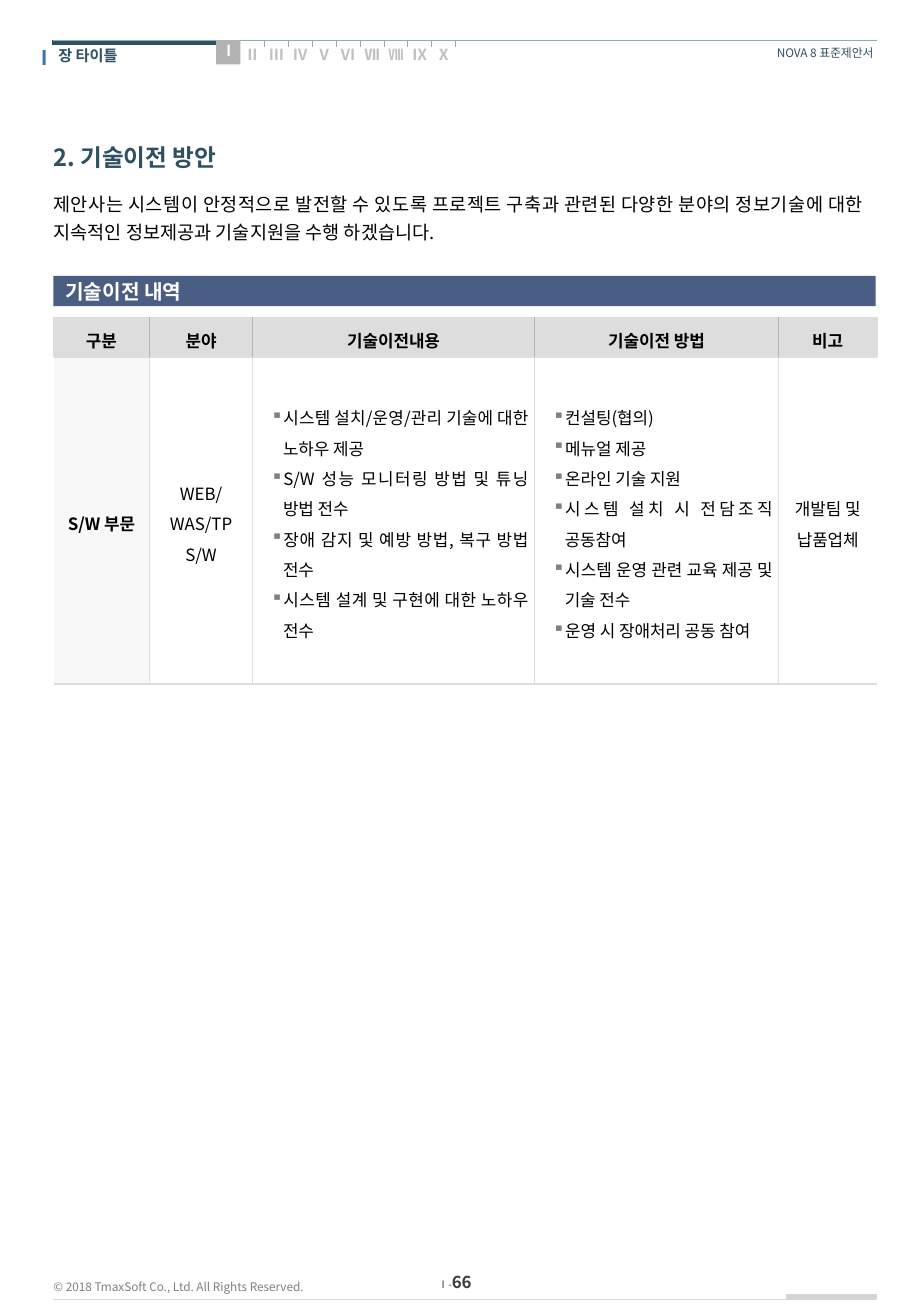
"""Build the technology transfer page of a proposal with its header, table and footer."""
from lxml import etree
from pptx import Presentation
from pptx.dml.color import RGBColor
from pptx.enum import dml, shapes, text
from pptx.oxml import ns
from pptx.util import Inches, Pt

FONT = "Noto Sans CJK KR"
BLACK = RGBColor(0x00, 0x00, 0x00)
WHITE = RGBColor(0xFF, 0xFF, 0xFF)
NAVY = RGBColor(0x2E, 0x50, 0x61)
BAND = RGBColor(0x4A, 0x5D, 0x82)
ACCENT = RGBColor(0x3D, 0x74, 0xAB)
RULE = RGBColor(0x8C, 0xAE, 0xBA)
FOOT_RULE = RGBColor(0xD6, 0xD5, 0xD4)
SILVER = RGBColor(0xC0, 0xC0, 0xC0)
MID_GREY = RGBColor(0xB2, 0xB2, 0xB2)
GREY = RGBColor(0x80, 0x80, 0x80)
DARK = RGBColor(0x3D, 0x3D, 0x3D)
HEAD_FILL = RGBColor(0xDD, 0xDD, 0xDD)
SIDE_FILL = RGBColor(0xF8, 0xF8, 0xF8)

LEFT, CENTER = text.PP_ALIGN.LEFT, text.PP_ALIGN.CENTER
RIGHT, JUSTIFY = text.PP_ALIGN.RIGHT, text.PP_ALIGN.JUSTIFY
TOP, MIDDLE = text.MSO_ANCHOR.TOP, text.MSO_ANCHOR.MIDDLE

CHAPTERS = "ⅠⅡⅢⅣⅤⅥⅦⅧⅨⅩ"
TITLE = "2. 기술이전 방안"
INTRO = ("제안사는 시스템이 안정적으로 발전할 수 있도록 프로젝트 구축과 관련된 다양한 분야의 "
         "정보기술에 대한 지속적인 정보제공과 기술지원을 수행 하겠습니다.")
COLUMNS = [0.79, 0.85, 2.32, 2.01, 0.81]
ROWS = [0.33, 2.69]
TABLE = [
    [["구분"], ["분야"], ["기술이전내용"], ["기술이전 방법"], ["비고"]],
    [["S/W 부문"],
     ["WEB/WAS/TP S/W"],
     ["시스템 설치/운영/관리 기술에 대한 노하우 제공",
      "S/W 성능 모니터링 방법 및 튜닝 방법 전수",
      "장애 감지 및 예방 방법, 복구 방법 전수",
      "시스템 설계 및 구현에 대한 노하우 전수"],
     ["컨설팅(협의)",
      "메뉴얼 제공",
      "온라인 기술 지원",
      "시스템 설치 시 전담조직 공동참여",
      "시스템 운영 관련 교육 제공 및 기술 전수",
      "운영 시 장애처리 공동 참여"],
     ["개발팀 및 납품업체"]],
]
HEADER_RULES = [
    (1.78, 0.35, 0.43, 0.35, NAVY, 3.5),
    (7.22, 0.33, 0.44, 0.33, RULE, 0.3),
]
FOOTER_RULES = [
    (7.21, 10.69, 0.44, 10.69, FOOT_RULE, 0.3),
    (7.22, 10.67, 6.47, 10.67, FOOT_RULE, 3.5),
]


def style_run(r, size, color, bold=False):
    r.font.size, r.font.bold, r.font.name = Pt(size), bold, FONT
    r.font.color.rgb = color
    etree.SubElement(r.font._element, ns.qn("a:ea"), typeface=FONT)


def set_frame(tf, anchor, wrap, margins=(0, 0, 0, 0)):
    tf.word_wrap, tf.vertical_anchor = wrap, anchor
    tf.margin_left, tf.margin_top, tf.margin_right, tf.margin_bottom = map(Inches, margins)


def add_text(s, box, content, size, color, bold=False, align=LEFT, anchor=TOP,
             wrap=True, spacing=None, margins=(0, 0, 0, 0)):
    tf = s.shapes.add_textbox(*map(Inches, box)).text_frame
    set_frame(tf, anchor, wrap, margins)
    p = tf.paragraphs[0]
    p.text, p.alignment, p.line_spacing = content, align, spacing
    style_run(p.runs[0], size, color, bold)
    return p


def add_rule(s, x1, y1, x2, y2, color, width):
    c = s.shapes.add_connector(shapes.MSO_CONNECTOR.STRAIGHT, *map(Inches, (x1, y1, x2, y2)))
    c.line.color.rgb, c.line.width = color, Pt(width)
    etree.SubElement(c._element.spPr, ns.qn("a:effectLst"))


def add_rect(s, *box):
    sp = s.shapes.add_shape(shapes.MSO_SHAPE.RECTANGLE, *map(Inches, box))
    sp.shadow.inherit = False
    sp.line.fill.background()
    return sp


def add_bullet(p):
    pPr = p._p.get_or_add_pPr()
    pPr.set("marL", str(Inches(0.2)))
    pPr.set("indent", str(Inches(-0.1)))
    clr = etree.SubElement(pPr, ns.qn("a:buClr"))
    etree.SubElement(clr, ns.qn("a:srgbClr"), val=str(GREY))
    etree.SubElement(pPr, ns.qn("a:buChar"), char="▪")


def set_borders(cell, **sides):
    tcPr = cell._tc.get_or_add_tcPr()
    for side, (color, width) in sides.items():
        ln = etree.SubElement(tcPr, ns.qn("a:ln" + side), w=str(Pt(width)))
        fill = etree.SubElement(ln, ns.qn("a:solidFill"))
        etree.SubElement(fill, ns.qn("a:srgbClr"), val=str(color))


def fill_cell(cell, lines, row, col):
    header, last = row == 0, col == len(COLUMNS) - 1
    inner, edge = (MID_GREY, HEAD_FILL) if header else (HEAD_FILL, WHITE)
    set_borders(cell, L=(inner if col else edge, 0.5), R=(edge if last else inner, 0.5),
                T=(HEAD_FILL, 0.5), B=(HEAD_FILL, 0.5 if header else 1.5))
    if header or col == 0:
        cell.fill.solid()
        cell.fill.fore_color.rgb = HEAD_FILL if header else SIDE_FILL
    else:
        cell.fill.background()
    cell.vertical_anchor = MIDDLE
    cell.margin_left = cell.margin_right = Inches(0.05)
    cell.margin_top = cell.margin_bottom = Inches(0.04)
    cell.text_frame.text = "\n".join(lines)
    for p in cell.text_frame.paragraphs:
        p.alignment, p.line_spacing = CENTER, 1.25
        if len(lines) > 1:
            p.alignment = JUSTIFY
            add_bullet(p)
        style_run(p.runs[0], 10, BLACK, header or col == 0)


def add_header(s):
    add_text(s, (0.48, 0.38, 1.28, 0.15), "장 타이틀", 9, NAVY, True)
    add_text(s, (6.37, 0.38, 0.82, 0.12), "NOVA 8 표준제안서", 7, NAVY, align=RIGHT, wrap=False)
    for rule in HEADER_RULES:
        add_rule(s, *rule)
    add_text(s, (0.28, 0.32, 0.08, 0.22), "Ⅰ", 12, ACCENT, True, CENTER, wrap=False,
             margins=(0, 0.05, 0, 0.05))
    tab = add_rect(s, 1.78, 0.33, 0.2, 0.2)
    tab.fill.patterned()
    tab.fill.pattern = dml.MSO_PATTERN.WIDE_UPWARD_DIAGONAL
    tab.fill.fore_color.rgb, tab.fill.back_color.rgb = SILVER, MID_GREY
    pitch = 1.77 / (len(CHAPTERS) - 1)
    for i, numeral in enumerate(CHAPTERS):
        x = 1.82 + i * pitch
        add_text(s, (x, 0.37 if i else 0.34, 0.12, 0.15), numeral, 9, SILVER if i else WHITE, True)
        if i:
            add_rule(s, x + 0.16, 0.33, x + 0.16, 0.39, RULE, 0.3)


def add_footer(s):
    p = add_text(s, (3.5, 10.46, 0.49, 0.17), "Ⅰ-", 6, DARK, align=CENTER, anchor=MIDDLE, wrap=False)
    r = p.add_run()
    r.text = "66"
    style_run(r, 10, DARK, True)
    add_text(s, (0.44, 10.47, 2.32, 0.24), "© 2018 TmaxSoft Co., Ltd. All Rights Reserved.",
             7, GREY, anchor=MIDDLE, wrap=False)
    for rule in FOOTER_RULES:
        add_rule(s, *rule)


def add_body(s):
    add_text(s, (0.44, 1.12, 6.77, 0.31), TITLE, 14, NAVY, True, spacing=1.25)
    add_text(s, (0.44, 1.54, 6.77, 0.5), INTRO, 11, BLACK, align=JUSTIFY, spacing=1.25,
             margins=(0, 0, 0.1, 0.05))
    band = add_rect(s, 0.44, 2.27, 6.77, 0.25)
    band.fill.solid()
    band.fill.fore_color.rgb = BAND
    set_frame(band.text_frame, MIDDLE, True, (0.1, 0, 0.1, 0))
    p = band.text_frame.paragraphs[0]
    p.text, p.alignment = "기술이전 내역", LEFT
    style_run(p.runs[0], 12, WHITE, True)
    box = (0.44, 2.61, sum(COLUMNS), sum(ROWS))
    table = s.shapes.add_table(len(ROWS), len(COLUMNS), *map(Inches, box)).table
    table.first_row = table.horz_banding = False
    for column, width in zip(table.columns, COLUMNS):
        column.width = Inches(width)
    for i, (row, height) in enumerate(zip(table.rows, ROWS)):
        row.height = Inches(height)
        for j, lines in enumerate(TABLE[i]):
            fill_cell(table.cell(i, j), lines, i, j)


def main():
    prs = Presentation()
    prs.slide_width, prs.slide_height = Inches(7.5), Inches(10.83)
    s = prs.slides.add_slide(prs.slide_layouts[6])
    add_footer(s)
    add_header(s)
    add_body(s)
    prs.save("out.pptx")


if __name__ == "__main__":
    main()
